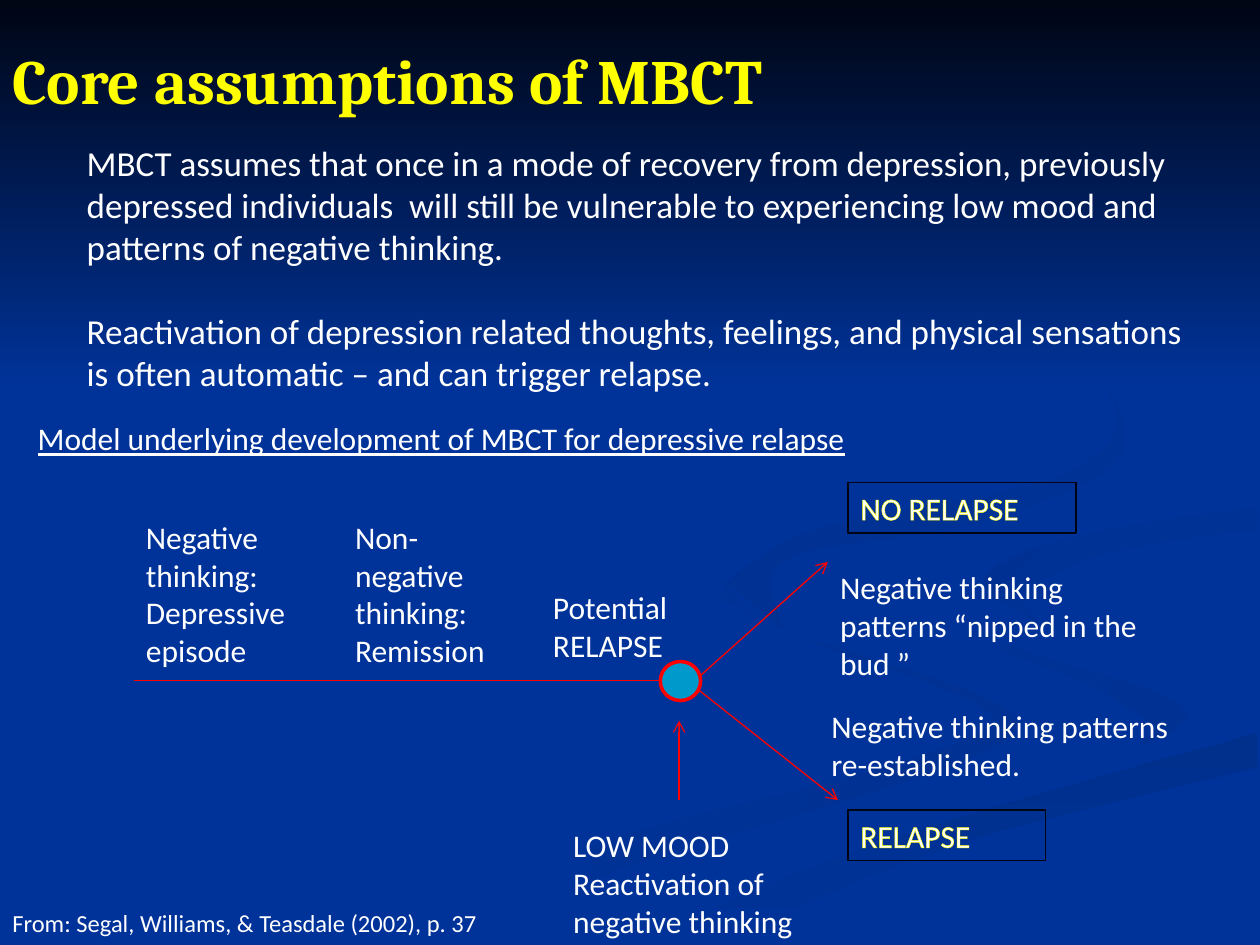
from lxml import etree
from pptx import Presentation
from pptx import util as u
from pptx.dml.color import RGBColor
from pptx.enum import shapes, text
from pptx.oxml.ns import qn

Inches, Pt = u.Inches, u.Pt
NAVY, BLUE, WHITE, RED, YELLOW = "000514", "003399", "FFFFFF", "FF0000", "FFFF00"

# Background ribbons: first colour, last colour, clockwise angle,
# then the two edges as points in 1/100 inch
RIBBONS = [
    (BLUE, "003193", 0,
     [(575, 459), (614, 496), (781, 553), (797, 588), (676, 634), (499, 687), (361, 749)],
     [(300, 749), (458, 674), (714, 605), (786, 566), (654, 513), (572, 476)]),
    (BLUE, "003193", 45,
     [(724, 464), (758, 498), (905, 540), (943, 570), (894, 605)],
     [(917, 576), (854, 539), (755, 505)]),
    ("002F8C", BLUE, 90,
     [(503, 749), (630, 693), (797, 638), (998, 581)],
     [(998, 609), (752, 672), (571, 749)]),
    (BLUE, BLUE, 0,
     [(999, 387), (788, 422), (725, 464), (793, 509), (943, 570), (743, 643), (477, 749)],
     [(503, 749), (696, 669), (999, 581)],
     [(999, 538), (817, 492), (792, 447), (999, 402)]),
    ("003091", BLUE, 45,
     [(998, 402), (849, 427), (781, 460), (826, 496)],
     [(805, 472), (878, 439), (998, 420)]),
    ("002F8E", BLUE, 45,
     [(762, 233), (864, 291), (889, 362), (786, 412), (624, 444), (622, 500)],
     [(577, 462), (649, 420), (842, 378), (885, 320), (805, 254)]),
]


def rgb(hex_colour):
    return RGBColor.from_string(hex_colour)


def smooth(points, steps=6):
    """Catmull-Rom curve through the points."""
    padded = [points[0], *points, points[-1]]
    curve = [points[0]]
    for a, b, c, d in zip(padded, padded[1:], padded[2:], padded[3:]):
        for t in (i / steps for i in range(1, steps + 1)):
            curve.append(tuple(
                round(q + t / 2 * (r - p + t * (2 * p - 5 * q + 4 * r - v
                                                + t * (3 * (q - r) + v - p))))
                for p, q, r, v in zip(a, b, c, d)))
    return curve


def shade(sp, first, last, angle):
    sp.shadow.inherit = False
    sp.line.fill.background()
    sp.fill.gradient()
    sp.fill.gradient_angle = -angle % 360
    for stop, colour in zip(sp.fill.gradient_stops, (first, last)):
        stop.color.rgb = rgb(colour)


def draw_background(s, width):
    s.background.fill.solid()
    s.background.fill.fore_color.rgb = rgb(BLUE)
    for first, last, angle, *edges in RIBBONS:
        points = [point for edge in edges for point in smooth(edge)]
        builder = s.shapes.build_freeform(*points[0], scale=Inches(0.01))
        builder.add_line_segments(points[1:], close=True)
        shade(builder.convert_to_shape(), first, last, angle)
    sky = s.shapes.add_shape(shapes.MSO_SHAPE.RECTANGLE, 0, 0, width, Inches(3.08))
    shade(sky, NAVY, BLUE, 90)


def write(sp, paragraphs, size, font="Calibri", colour=WHITE, gap=0):
    tf = sp.text_frame
    tf.word_wrap = True
    tf.vertical_anchor = text.MSO_ANCHOR.TOP
    for i, words in enumerate(paragraphs):
        p = tf.paragraphs[0] if i == 0 else tf.add_paragraph()
        p.text = words
        p.alignment = text.PP_ALIGN.LEFT
        p.space_before = Pt(gap if i else 0)
        p.font.name, p.font.size = font, Pt(size)
        p.font.color.rgb = rgb(colour)
    return tf


def add_text(s, box, paragraphs, size=18, gap=0):
    sp = s.shapes.add_textbox(*map(Inches, box))
    return write(sp, paragraphs, size, gap=gap)


def add_line(s, start, end, arrow=True):
    line = s.shapes.add_connector(
        shapes.MSO_CONNECTOR.STRAIGHT, *map(Inches, start + end))
    line.line.color.rgb = rgb(RED)
    line.line.width = Pt(0.75)
    sp_pr = line._element.spPr
    if arrow:
        etree.SubElement(sp_pr.find(qn("a:ln")), qn("a:tailEnd"), type="arrow")
    etree.SubElement(sp_pr, qn("a:effectLst"))


def add_outcome(s, box, label):
    sp = s.shapes.add_shape(shapes.MSO_SHAPE.RECTANGLE, *map(Inches, box))
    sp.shadow.inherit = False
    sp.fill.background()
    sp.line.color.rgb = rgb(NAVY)
    sp.line.width = Pt(0.75)
    r = write(sp, [label], 18).paragraphs[0].runs[0]
    # Yellow outline around the letters
    ln = etree.Element(qn("a:ln"), w=str(Pt(0.75)))
    fill = etree.SubElement(ln, qn("a:solidFill"))
    etree.SubElement(fill, qn("a:srgbClr"), val=YELLOW)
    r._r.get_or_add_rPr().insert(0, ln)


def add_title(s, box, words):
    title = s.shapes.title
    title.left, title.top, title.width, title.height = map(Inches, box)
    write(title, [words], 36, "Cambria", YELLOW).paragraphs[0].font.bold = True


def add_model(s, left, top):
    """Timeline that forks at a node into two outcomes."""
    def at(x, y, *size):
        return (left + x, top + y, *size)

    # Timeline, node and arrows
    add_line(s, at(0, 1.57), at(4.25, 1.57), arrow=False)
    node = s.shapes.add_shape(shapes.MSO_SHAPE.OVAL, *map(Inches, at(4.18, 1.42, 0.32, 0.31)))
    node.shadow.inherit = False
    node.fill.solid()
    node.fill.fore_color.rgb = rgb("0099CC")
    node.line.color.rgb = rgb(RED)
    node.line.width = Pt(2)
    add_line(s, at(4.49, 1.54), at(5.51, 0.63))
    add_line(s, at(4.49, 1.65), at(5.59, 2.52))
    add_line(s, at(4.33, 2.52), at(4.33, 1.89))

    # Stages and explanations
    for box, paragraphs in [
        (at(0, 0.23, 1.34, 1.31), ["Negative thinking:", "Depressive episode"]),
        (at(1.66, 0.23, 1.34, 1.31), ["Non-negative thinking:", "Remission"]),
        (at(3.23, 0.79, 1.42, 0.71), ["Potential RELAPSE"]),
        (at(3.39, 2.68, 2.05, 1.01), ["LOW MOOD", "Reactivation of negative thinking"]),
        (at(5.51, 0.63, 2.6, 1.01), ["Negative thinking patterns “nipped in the bud ”"]),
        (at(5.44, 1.73, 2.91, 0.71), ["Negative thinking patterns re-established."]),
    ]:
        add_text(s, box, paragraphs)

    # Outcomes
    add_outcome(s, at(5.67, 2.6, 1.57, 0.4), "RELAPSE")
    add_outcome(s, at(5.67, 0, 1.81, 0.4), "NO RELAPSE")


def main():
    prs = Presentation()
    prs.slide_width, prs.slide_height = Inches(10), Inches(7.5)
    s = prs.slides.add_slide(prs.slide_layouts[5])
    draw_background(s, prs.slide_width)
    # Keep the title above the background
    s.shapes._spTree.append(s.shapes.title._element)
    add_title(s, (0, 0.28, 10, 0.71), "Core assumptions of MBCT")
    add_text(s, (0.59, 1.07, 9.06, 2.12), [
        "MBCT assumes that once in a mode of recovery from depression, previously "
        "depressed individuals  will still be vulnerable to experiencing low mood "
        "and patterns of negative thinking.",
        "Reactivation of depression related thoughts, feelings, and physical "
        "sensations is often automatic – and can trigger relapse.",
    ], size=20, gap=24)
    add_model(s, 1.06, 3.83)
    heading = add_text(s, (0.2, 3.28, 7.48, 0.4),
                       ["Model underlying development of MBCT for depressive relapse"])
    heading.paragraphs[0].font.underline = True
    add_text(s, (0, 7.16, 4.37, 0.34),
             ["From: Segal, Williams, & Teasdale (2002), p. 37"], size=14)
    prs.save("out.pptx")


if __name__ == "__main__":
    main()
